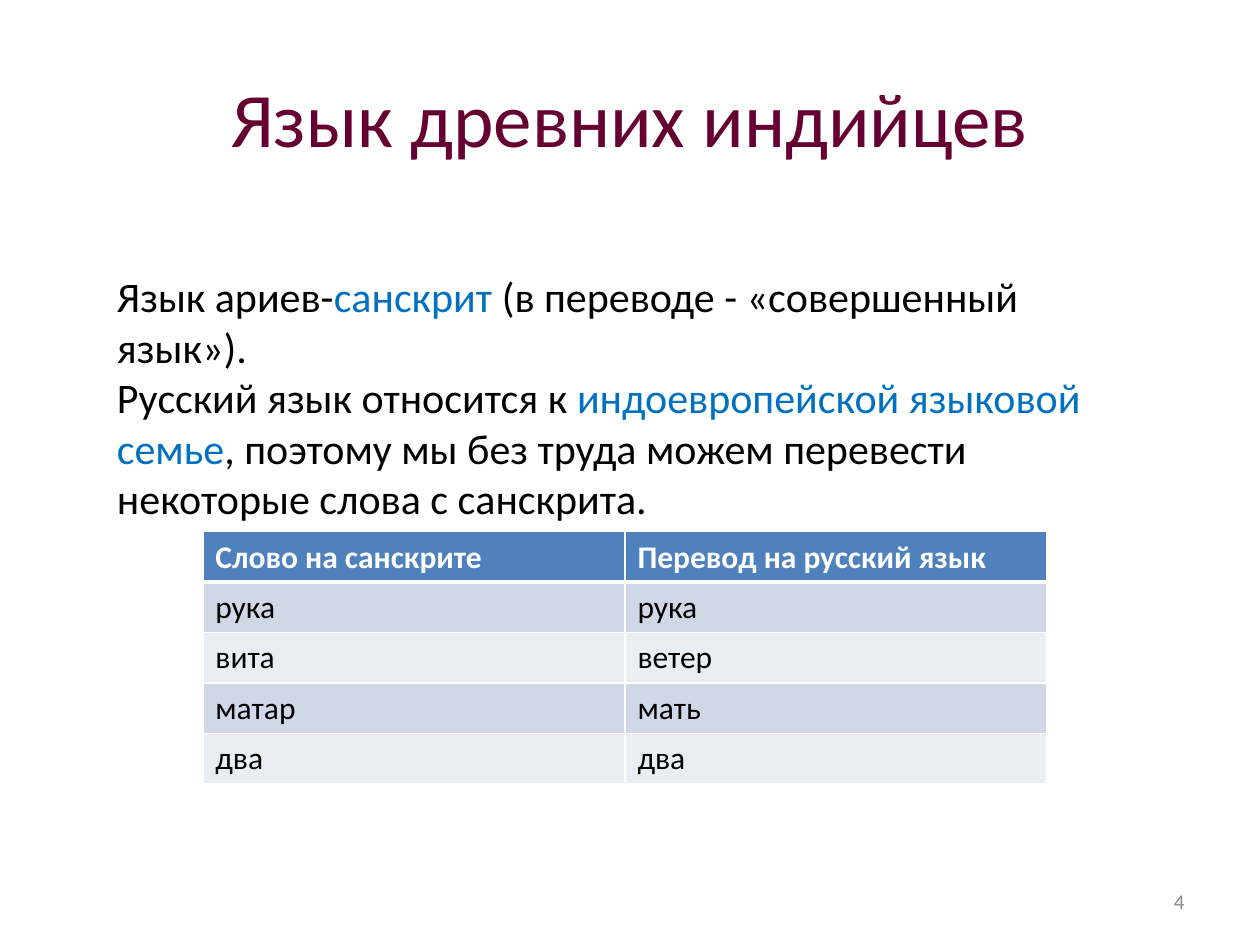
"""Build a slide about Sanskrit with a small word table."""
import pptx
import pptx.dml.color
import pptx.enum.text
import pptx.oxml.ns
import pptx.util
from lxml import etree

Inches = pptx.util.Inches
ALIGN = pptx.enum.text.PP_ALIGN
ANCHOR = pptx.enum.text.MSO_ANCHOR
BLACK, WHITE, BLUE = "000000", "FFFFFF", "0070C0"
HEADER, BANDS = "4F81BD", ("D0D8E8", "E9EDF4")


def color(value):
    """Turn a hex string into a colour."""
    return pptx.dml.color.RGBColor.from_string(value)


class SlideBuilder:
    """Hold the text style and the current slide."""

    font = "Calibri"

    def __init__(self, page):
        """Keep the slide to fill."""
        self.page = page

    def span(self, para, text, size, ink=BLACK, bold=False):
        """Add one formatted run."""
        span = para.add_run()
        span.text = text
        span.font.name = self.font
        span.font.size = pptx.util.Pt(size)
        span.font.bold = bold
        span.font.color.rgb = color(ink)

    def title(self, text, size, ink):
        """Fill the title placeholder."""
        box = self.page.shapes.title
        box.left, box.top, box.width, box.height = map(Inches, (0.5, 0.3, 9, 1.25))
        box.text_frame.vertical_anchor = ANCHOR.MIDDLE
        para = box.text_frame.paragraphs[0]
        para.alignment = ALIGN.CENTER
        self.span(para, text, size, ink)

    def text(self, place, paragraphs, size, align=ALIGN.LEFT, anchor=ANCHOR.TOP):
        """Add a text box from paragraphs of (text, colour) runs."""
        frame = self.page.shapes.add_textbox(*map(Inches, place)).text_frame
        frame.word_wrap = True
        frame.vertical_anchor = anchor
        for index, runs in enumerate(paragraphs):
            para = frame.add_paragraph() if index else frame.paragraphs[0]
            para.alignment = align
            for text, ink in runs:
                self.span(para, text, size, ink)

    def borders(self, cell, top, bottom):
        """Draw white lines around a cell."""
        properties = cell._tc.get_or_add_tcPr()
        for side, width in zip("LRTB", (1, 1, top, bottom)):
            line = etree.SubElement(properties, pptx.oxml.ns.qn(f"a:ln{side}"),
                                    w=str(pptx.util.Pt(width)))
            fill = etree.SubElement(line, pptx.oxml.ns.qn("a:solidFill"))
            etree.SubElement(fill, pptx.oxml.ns.qn("a:srgbClr"), val=WHITE)

    def table(self, place, rows, size):
        """Add a banded table whose first row is the header."""
        shape = self.page.shapes.add_table(len(rows), len(rows[0]), *map(Inches, place))
        for r, words in enumerate(rows):
            is_header = r == 0
            for c, word in enumerate(words):
                cell = shape.table.cell(r, c)
                self.borders(cell, 3 if r == 1 else 1, 3 if is_header else 1)
                cell.fill.solid()
                cell.fill.fore_color.rgb = color(HEADER if is_header else BANDS[(r - 1) % 2])
                self.span(cell.text_frame.paragraphs[0], word, size,
                          WHITE if is_header else BLACK, is_header)


def main():
    """Build and save the deck."""
    deck = pptx.Presentation()
    deck.slide_width, deck.slide_height = Inches(10), Inches(7.5)
    slide = SlideBuilder(deck.slides.add_slide(deck.slide_layouts[5]))
    slide.title("Язык древних индийцев", 44, "660033")
    slide.text((0.83, 2.1, 8.35, 2.12), [
        [("Язык ариев-", BLACK), ("санскрит", BLUE),
         (" (в переводе - «совершенный язык»).", BLACK)],
        [("Русский язык относится к ", BLACK), ("индоевропейской языковой семье", BLUE),
         (", поэтому мы без труда можем перевести некоторые слова с санскрита.", BLACK)],
    ], 24)
    slide.table((1.61, 4.22, 6.7, 2), [
        ("Слово на санскрите", "Перевод на русский язык"),
        ("рука", "рука"),
        ("вита", "ветер"),
        ("матар", "мать"),
        ("два", "два"),
    ], 18)
    slide.text((7.17, 6.95, 2.33, 0.4), [[("4", "8C8C8C")]], 12, ALIGN.RIGHT, ANCHOR.MIDDLE)
    deck.save("out.pptx")


if __name__ == "__main__":
    main()
